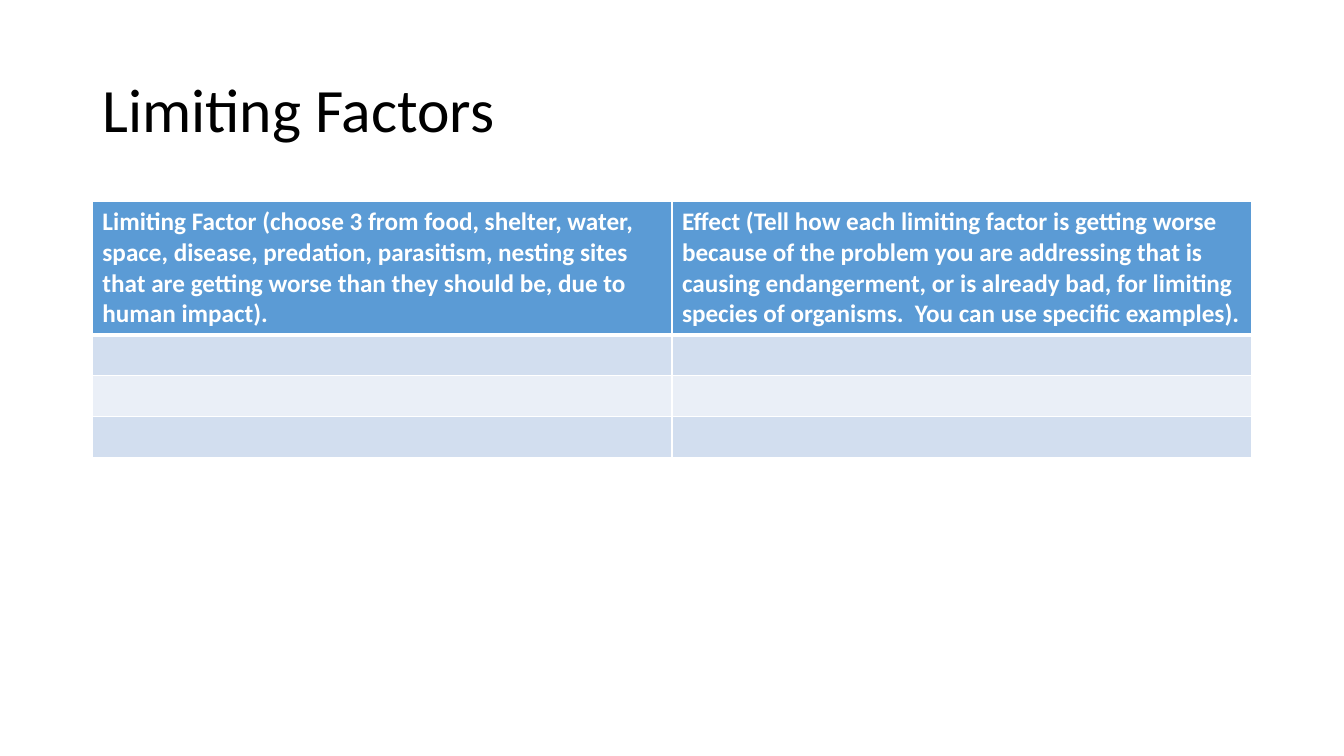
from lxml import etree
from pptx import Presentation
from pptx import util as u
from pptx.dml.color import RGBColor
from pptx.enum import text
from pptx.oxml import ns

PX = 9525  # EMU per px, 96 px to the inch
FONT = "Calibri"
BLACK = RGBColor(0x00, 0x00, 0x00)
WHITE = RGBColor(0xFF, 0xFF, 0xFF)
BLUE = RGBColor(0x5B, 0x9B, 0xD5)
BANDS = [RGBColor(0xD2, 0xDE, 0xEF), RGBColor(0xEA, 0xEF, 0xF7)]

HEADS = [
    "Limiting Factor (choose 3 from food, shelter, water, space, disease, "
    "predation, parasitism, nesting sites that are getting worse than they "
    "should be, due to human impact).",
    "Effect (Tell how each limiting factor is getting worse because of the "
    "problem you are addressing that is causing endangerment, or is already "
    "bad, for limiting species of organisms.  You can use specific examples).",
]
BLANKS = 3  # rows left for answers
HEAD_H, ROW_H = 125, 39


def px(n):
    return u.Emu(n * PX)


def style(font, color, **props):
    font.color.rgb = color
    for name, value in dict(name=FONT, **props).items():
        setattr(font, name, value)


def edge(cell, side, points):
    """Draw one white cell border."""
    line = etree.SubElement(cell._tc.get_or_add_tcPr(), ns.qn(f"a:ln{side}"),
                            w=str(u.Pt(points)))
    fill = etree.SubElement(line, ns.qn("a:solidFill"))
    etree.SubElement(fill, ns.qn("a:srgbClr"), val=str(WHITE))


def add_title(slide, box, words):
    title = slide.shapes.title
    for name, value in zip(("left", "top", "width", "height"), box):
        setattr(title, name, px(value))
    frame = title.text_frame
    frame.text = words
    frame.vertical_anchor = text.MSO_ANCHOR.MIDDLE
    para = frame.paragraphs[0]
    para.alignment = text.PP_ALIGN.LEFT
    para.line_spacing = 0.9
    style(para.runs[0].font, BLACK, size=u.Pt(44))


def add_grid(slide, box):
    frame = slide.shapes.add_table(BLANKS + 1, len(HEADS), *map(px, box))
    table = frame.table
    for col in table.columns:
        col.width = px(box[2] // len(HEADS))
    for r, row in enumerate(table.rows):
        row.height = px(ROW_H if r else HEAD_H)
        for cell, words in zip(row.cells, HEADS):
            # Borders, with a heavy rule under the heading
            for side, points in dict(L=1, R=1, T=3 if r == 1 else 1,
                                     B=1 if r else 3).items():
                edge(cell, side, points)
            # Fill
            cell.fill.solid()
            cell.fill.fore_color.rgb = BANDS[(r - 1) % 2] if r else BLUE
            # Heading text
            if r == 0:
                cell.text = words
                run = cell.text_frame.paragraphs[0].runs[0]
                style(run.font, WHITE, size=u.Pt(18), bold=True)


def main():
    deck = Presentation()
    deck.slide_width, deck.slide_height = px(1280), px(720)
    slide = deck.slides.add_slide(deck.slide_layouts[5])
    add_title(slide, (88, 38, 1104, 139), "Limiting Factors")
    add_grid(slide, (88, 192, 1104, HEAD_H + BLANKS * ROW_H))
    deck.save("out.pptx")


if __name__ == "__main__":
    main()
